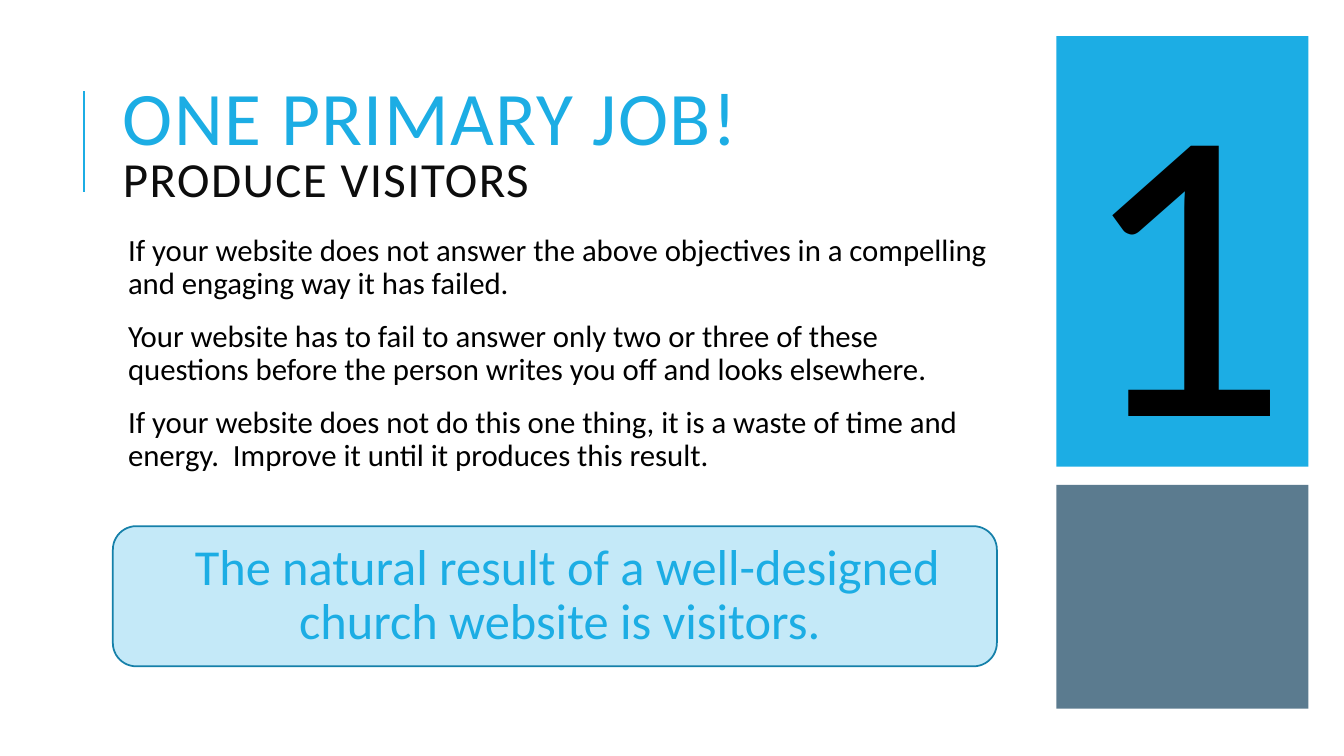
from dataclasses import dataclass

from lxml import etree
from pptx import Presentation
from pptx.dml.color import RGBColor
from pptx.enum import shapes, text
from pptx.oxml import ns
from pptx.util import Pt


@dataclass(frozen=True)
class Theme:
    font: str = "Calibri"
    blue: str = "1CADE4"
    slate: str = "335B74"
    edge: str = "1580A9"
    black: str = "000000"
    ink: str = "0D0D0D"
    title: int = 54
    sub: int = 35
    body: int = 22
    quote: int = 36
    digit: int = 300


THEME = Theme()
LEFT, WIDTH = 80.64, 631.44
SIDE, BAND = 754.56, 180
POINTS = [
    "If your website does not answer the above objectives in a compelling and engaging way it has failed.",
    "Your website has to fail to answer only two or three of these questions before the person writes you off and looks elsewhere.",
    "If your website does not do this one thing, it is a waste of time and energy.  Improve it until it produces this result.",
]


def rgb(tone):
    return RGBColor.from_string(tone)


def place(shape, x, y, w, h):
    shape.left, shape.top = Pt(x), Pt(y)
    shape.width, shape.height = Pt(w), Pt(h)


def style(run, size, tone):
    run.font.name = THEME.font
    run.font.size = Pt(size)
    run.font.color.rgb = rgb(tone)


def inset(frame, gap):
    frame.margin_left = frame.margin_right = Pt(gap)
    frame.margin_top = frame.margin_bottom = Pt(gap)


def bullet(para):
    props = para._p.get_or_add_pPr()
    props.set("marL", str(Pt(7.2)))
    props.set("indent", str(Pt(-7.2)))
    color = etree.SubElement(props, ns.qn("a:buClr"))
    etree.SubElement(color, ns.qn("a:srgbClr")).set("val", THEME.blue)
    etree.SubElement(props, ns.qn("a:buChar")).set("char", " ")


def write(frame, lines, size, tone, align):
    frame.word_wrap = True
    frame.auto_size = text.MSO_AUTO_SIZE.NONE
    inset(frame, 3.6)
    frame.text = "\n".join(lines)
    for i, para in enumerate(frame.paragraphs):
        bullet(para)
        para.alignment = align
        para.line_spacing = 0.9
        para.space_before = Pt(12 if i else 0)
        para.space_after = Pt(2)
        style(para.runs[0], size, tone)


def panel(slide, kind, box, tone, alpha=100):
    shape = slide.shapes.add_shape(kind, *map(Pt, box))
    shape.shadow.inherit = False
    shape.fill.solid()
    shape.fill.fore_color.rgb = rgb(tone)
    shape.line.fill.background()
    if alpha < 100:
        color = shape.fill._xPr.find(".//" + ns.qn("a:srgbClr"))
        etree.SubElement(color, ns.qn("a:alpha")).set("val", str(alpha * 1000))
    return shape


def rule(slide, x, top, end):
    line = slide.shapes.add_connector(
        shapes.MSO_CONNECTOR.STRAIGHT, Pt(x), Pt(end), Pt(x), Pt(top))
    line.line.color.rgb = rgb(THEME.blue)
    line.line.width = Pt(1.5)
    etree.SubElement(line._element.spPr, ns.qn("a:effectLst"))


def heading(shape):
    place(shape, LEFT, 46.08, WIDTH, 118.08)
    frame = shape.text_frame
    frame.word_wrap = True
    frame.auto_size = text.MSO_AUTO_SIZE.NONE
    frame.vertical_anchor = text.MSO_ANCHOR.MIDDLE
    frame.text = "ONE PRIMARY JOB!\vPRODUCE VISITORS"
    para = frame.paragraphs[0]
    para.alignment = text.PP_ALIGN.LEFT
    para.line_spacing = 0.8
    looks = [(THEME.title, THEME.blue), (THEME.sub, THEME.ink)]
    for run, look in zip(para.runs, looks):
        style(run, *look)
        run._r.get_or_add_rPr().set("spc", "100")


def quote(slide):
    card = panel(slide, shapes.MSO_SHAPE.ROUNDED_RECTANGLE,
                 (LEFT, 375.84, WIDTH, 100.08), THEME.blue, 26)
    card.line.color.rgb = rgb(THEME.edge)
    card.line.width = Pt(1.25)
    card.text_frame.vertical_anchor = text.MSO_ANCHOR.MIDDLE
    write(card.text_frame,
          ["The natural result of a well-designed church website is visitors."],
          THEME.quote, THEME.blue, text.PP_ALIGN.CENTER)


def digit(slide):
    box = slide.shapes.add_textbox(Pt(SIDE), Pt(-5.76), Pt(181.44), Pt(370.8))
    frame = box.text_frame
    frame.word_wrap = False
    frame.auto_size = text.MSO_AUTO_SIZE.SHAPE_TO_FIT_TEXT
    frame.text = "1"
    para = frame.paragraphs[0]
    para.alignment = text.PP_ALIGN.CENTER
    style(para.runs[0], THEME.digit, THEME.black)


def main():
    deck = Presentation()
    deck.slide_width, deck.slide_height = Pt(960), Pt(540)
    slide = deck.slides.add_slide(deck.slide_layouts[1])
    title, body = slide.placeholders
    rule(slide, 59.76, 64.8, 136.8)
    rect = shapes.MSO_SHAPE.RECTANGLE
    panel(slide, rect, (SIDE, 346.32, BAND, 159.84), THEME.slate, 80)
    panel(slide, rect, (SIDE, 25.92, BAND, 307.44), THEME.blue)
    heading(title)
    place(body, LEFT, 164.16, WIDTH, 342)
    write(body.text_frame, POINTS, THEME.body, THEME.black, text.PP_ALIGN.LEFT)
    quote(slide)
    digit(slide)
    deck.save("out.pptx")


if __name__ == "__main__":
    main()
